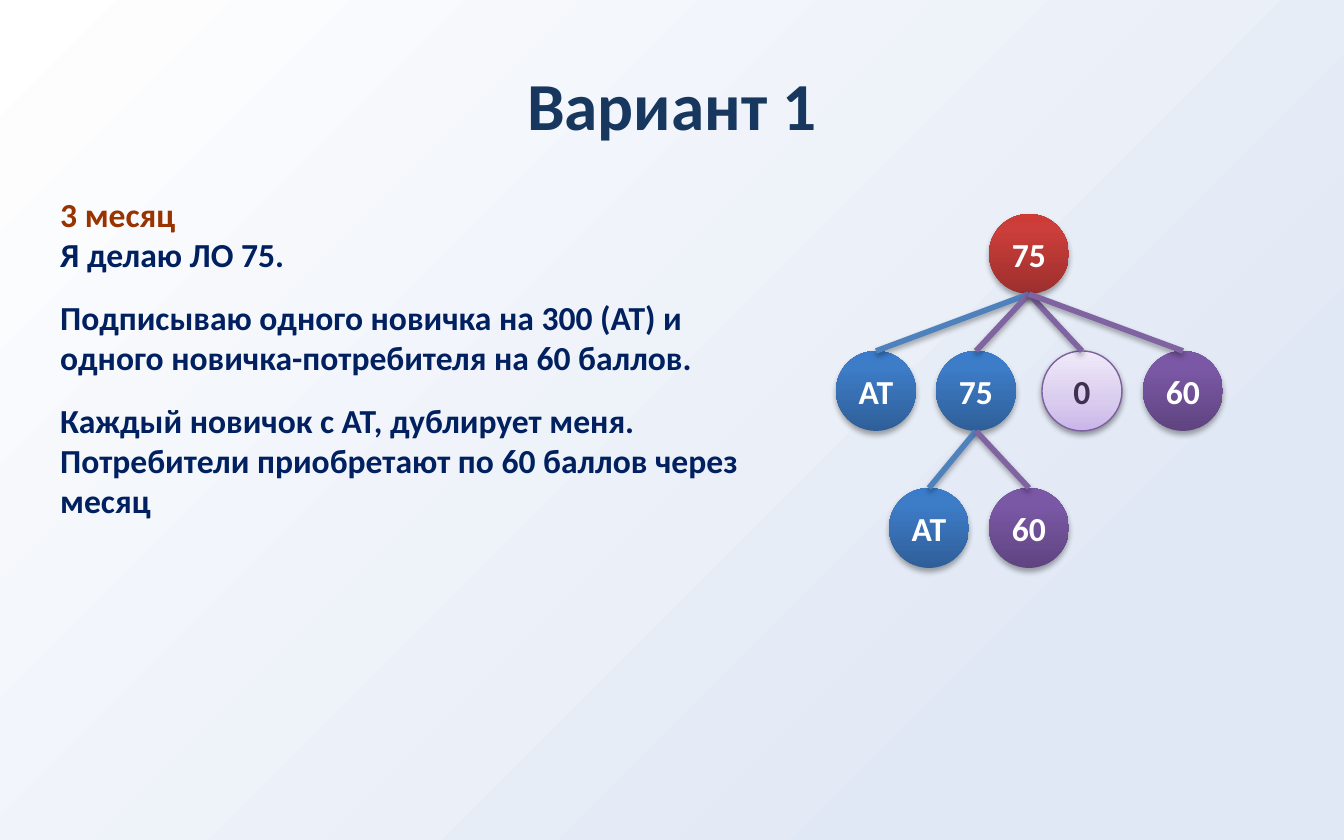
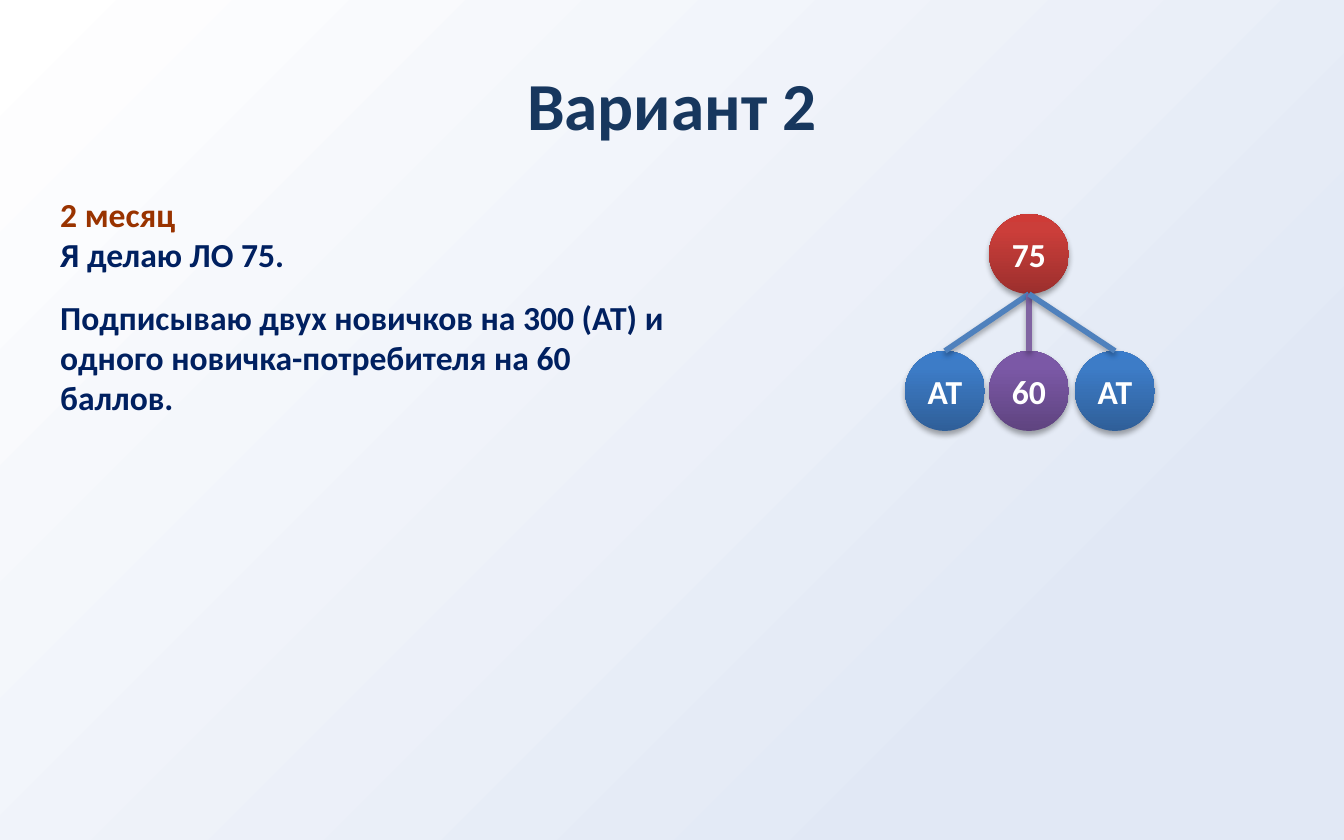
from lxml import etree
from pptx import Presentation
from pptx.dml.color import RGBColor
from pptx.enum.shapes import MSO_CONNECTOR, MSO_SHAPE
from pptx.enum.text import MSO_ANCHOR, MSO_AUTO_SIZE, PP_ALIGN
from pptx.oxml.ns import qn
from pptx.util import Emu, Pt

ELLIPSE = MSO_SHAPE.OVAL
STRAIGHT = MSO_CONNECTOR.STRAIGHT
MIDDLE = MSO_ANCHOR.MIDDLE
CENTER = PP_ALIGN.CENTER
GROW = MSO_AUTO_SIZE.SHAPE_TO_FIT_TEXT

FONT = "Calibri"
TITLE_COLOR = RGBColor(0x17, 0x37, 0x5E)
MONTH_COLOR = RGBColor(0x99, 0x33, 0x00)
TEXT_COLOR = RGBColor(0x00, 0x20, 0x60)
WHITE = RGBColor(0xFF, 0xFF, 0xFF)
DARK_PURPLE = RGBColor(0x40, 0x31, 0x52)
OUTLINE_PURPLE = RGBColor(0x7D, 0x60, 0xA0)
BLUE_LINE = RGBColor(0x4F, 0x81, 0xBD)
PURPLE_LINE = RGBColor(0x80, 0x64, 0xA2)

BACKGROUND = [(0, WHITE), (80, RGBColor(0xE1, 0xE8, 0xF5))]
RED = [(0, RGBColor(0x9C, 0x2F, 0x2D)), (80, RGBColor(0xCB, 0x3E, 0x3A)),
       (100, RGBColor(0xCE, 0x3B, 0x37))]
BLUE = [(0, RGBColor(0x2F, 0x5F, 0x99)), (80, RGBColor(0x3D, 0x7C, 0xC7)),
        (100, RGBColor(0x3A, 0x7C, 0xCB))]
PURPLE = [(0, RGBColor(0x5F, 0x44, 0x80)), (80, RGBColor(0x7B, 0x58, 0xA6)),
          (100, RGBColor(0x7C, 0x57, 0xA8))]
PALE = [(0, RGBColor(0xC9, 0xB5, 0xE8)), (35, RGBColor(0xD8, 0xCB, 0xEE)),
        (100, RGBColor(0xF0, 0xEA, 0xF9))]

SLIDE_SIZE = (1344, 840)
TITLE_BOX = (67, 34, 1210, 140)
TEXT_LEFT, TEXT_TOP = 47, 187
TREE_TOP, LEVEL_STEP, NODE_SIZE = 214, 137, 80
ELLIPSE_BOTTOM_SITE = 4

# Node fields: label, level, left, fill, parent index, line colour
SLIDES = [
    {
        "title": "Вариант 1",
        "text_size": (730, 344),
        "text": [
            "3 месяц",
            "Я делаю ЛО 75.",
            "Подписываю одного новичка на 300 (АТ) и одного новичка-потребителя на 60 баллов.",
            "Каждый новичок с АТ, дублирует меня.\n"
            "Потребители приобретают по 60 баллов через месяц",
        ],
        "nodes": [
            ("75", 0, 989, RED, None, None),
            ("АТ", 1, 836, BLUE, 0, BLUE_LINE),
            ("75", 1, 936, BLUE, 0, PURPLE_LINE),
            ("0", 1, 1042, PALE, 0, PURPLE_LINE),
            ("60", 1, 1143, PURPLE, 0, PURPLE_LINE),
            ("АТ", 2, 889, BLUE, 2, BLUE_LINE),
            ("60", 2, 989, PURPLE, 2, PURPLE_LINE),
        ],
    },
    {
        "title": "Вариант 2",
        "text_size": (634, 239),
        "text": [
            "2 месяц",
            "Я делаю ЛО 75.",
            "Подписываю двух новичков на 300 (АТ) и одного новичка-потребителя на 60 баллов.",
        ],
        "nodes": [
            ("75", 0, 989, RED, None, None),
            ("АТ", 1, 905, BLUE, 0, BLUE_LINE),
            ("60", 1, 989, PURPLE, 0, PURPLE_LINE),
            ("АТ", 1, 1075, BLUE, 0, BLUE_LINE),
        ],
    },
]


def px(value):
    return Emu(round(value * 914400 / 134.4))


def box(*lengths):
    return [px(length) for length in lengths]


def set_font(paragraph, size, color):
    paragraph.font.name = FONT
    paragraph.font.size = Pt(size)
    paragraph.font.bold = True
    paragraph.font.color.rgb = color


def set_gradient(fill, element, stops, angle):
    fill.gradient()
    fill.gradient_angle = angle
    stop_list = element.find(".//" + qn("a:gsLst"))
    for stop in list(stop_list):
        stop_list.remove(stop)
    for position, color in stops:
        stop = etree.SubElement(stop_list, qn("a:gs"), pos=str(position * 1000))
        etree.SubElement(stop, qn("a:srgbClr"), val=str(color))


def add_shadow(shape, opacity=35, distance=23000):
    effects = etree.SubElement(shape._element.spPr, qn("a:effectLst"))
    shadow = etree.SubElement(effects, qn("a:outerShdw"), blurRad="40000",
                              dist=str(distance), dir="5400000", rotWithShape="0")
    color = etree.SubElement(shadow, qn("a:srgbClr"), val="000000")
    etree.SubElement(color, qn("a:alpha"), val=str(opacity * 1000))


def add_title(slide, text):
    title = slide.shapes.title
    title.left, title.top, title.width, title.height = box(*TITLE_BOX)
    title.text_frame.text = text
    title.text_frame.vertical_anchor = MIDDLE
    paragraph = title.text_frame.paragraphs[0]
    paragraph.alignment = CENTER
    set_font(paragraph, 36, TITLE_COLOR)


def add_description(slide, texts, size):
    shape = slide.shapes.add_textbox(*box(TEXT_LEFT, TEXT_TOP, *size))
    frame = shape.text_frame
    frame.word_wrap = True
    frame.auto_size = GROW
    for index, text in enumerate(texts):
        paragraph = frame.add_paragraph() if index else frame.paragraphs[0]
        paragraph.text = text
        set_font(paragraph, 18, TEXT_COLOR if index else MONTH_COLOR)
        if index > 1:
            paragraph.space_before = Pt(12)


def add_node(slide, label, level, left, stops):
    top = TREE_TOP + level * LEVEL_STEP
    shape = slide.shapes.add_shape(ELLIPSE, *box(left, top, NODE_SIZE, NODE_SIZE))
    set_gradient(shape.fill, shape._element.spPr, stops, 90)
    pale = stops is PALE
    if pale:
        shape.line.color.rgb = OUTLINE_PURPLE
        shape.line.width = Pt(0.75)
        add_shadow(shape, 38, 20000)
    else:
        shape.line.fill.background()
        add_shadow(shape)
    frame = shape.text_frame
    frame.margin_left = frame.margin_right = px(5)
    frame.margin_top = frame.margin_bottom = px(7)
    frame.word_wrap = False
    frame.vertical_anchor = MIDDLE
    frame.text = label
    paragraph = frame.paragraphs[0]
    paragraph.alignment = CENTER
    set_font(paragraph, 18, DARK_PURPLE if pale else WHITE)
    return shape


def add_branch(slide, parent, child, color):
    connector = slide.shapes.add_connector(STRAIGHT, 0, 0, 0, 0)
    connector.begin_connect(parent, 2)
    connector._element.find(".//" + qn("a:stCxn")).set("idx", str(ELLIPSE_BOTTOM_SITE))
    connector.end_connect(child, 0)
    connector.line.color.rgb = color
    connector.line.width = Pt(3)
    add_shadow(connector)


def add_tree(slide, nodes):
    shapes = [add_node(slide, *node[:4]) for node in nodes]
    for child, (*_, parent, color) in zip(shapes, nodes):
        if parent is not None:
            add_branch(slide, shapes[parent], child, color)


def main():
    presentation = Presentation()
    presentation.slide_width, presentation.slide_height = box(*SLIDE_SIZE)
    master = presentation.slide_master
    set_gradient(master.background.fill, master._element, BACKGROUND, 315)
    for content in SLIDES:
        slide = presentation.slides.add_slide(presentation.slide_layouts[5])
        add_title(slide, content["title"])
        add_description(slide, content["text"], content["text_size"])
        add_tree(slide, content["nodes"])
    presentation.save("out.pptx")


if __name__ == "__main__":
    main()
